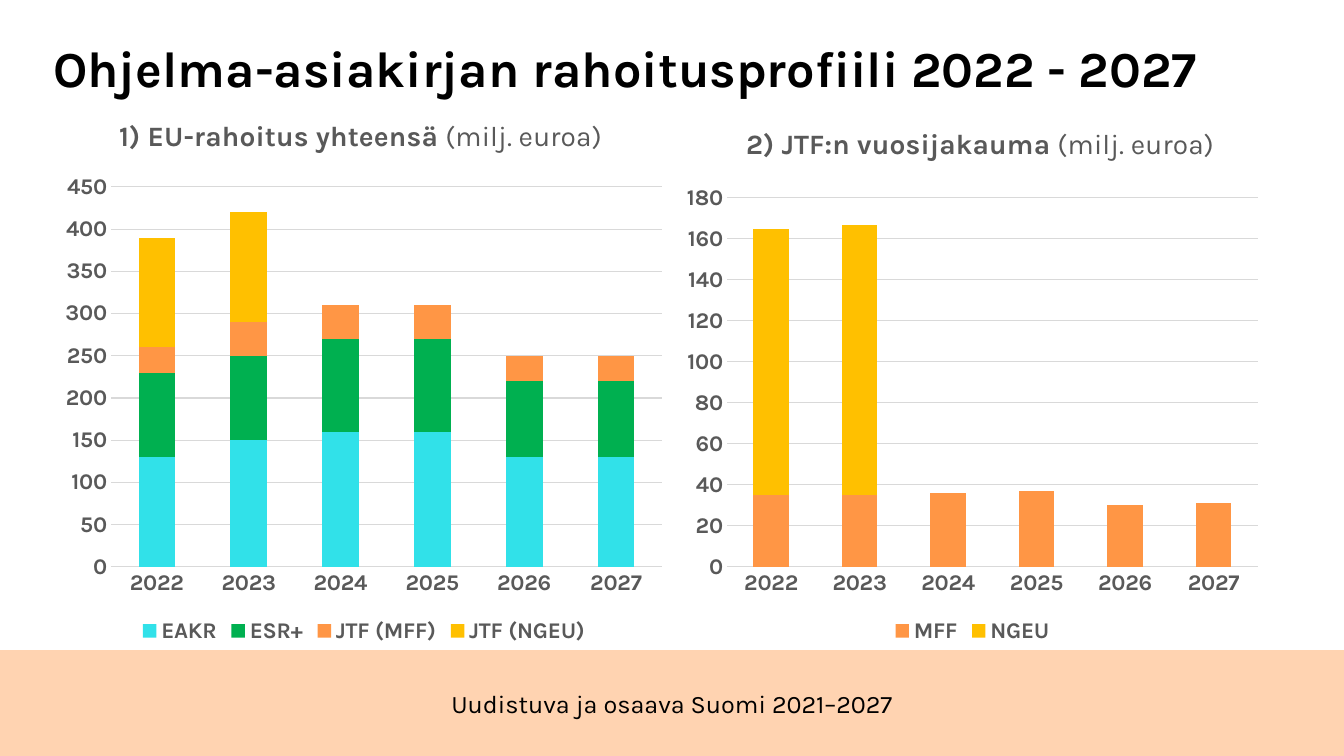
from lxml import etree
from pptx import Presentation
from pptx.chart.data import CategoryChartData
from pptx.dml.color import RGBColor
from pptx.enum.chart import XL_CHART_TYPE, XL_LEGEND_POSITION, XL_TICK_MARK
from pptx.enum.shapes import MSO_SHAPE
from pptx.enum.text import MSO_ANCHOR, PP_ALIGN
from pptx.oxml.ns import qn
from pptx.util import Pt

STACKED = XL_CHART_TYPE.COLUMN_STACKED
BOTTOM = XL_LEGEND_POSITION.BOTTOM
NO_TICK = XL_TICK_MARK.NONE
RECT = MSO_SHAPE.RECTANGLE
MIDDLE = MSO_ANCHOR.MIDDLE
LOW = MSO_ANCHOR.BOTTOM
LEFT = PP_ALIGN.LEFT
CENTER = PP_ALIGN.CENTER

WIDE, HIGH = 1344, 756
SCALE = 12192000 / WIDE
FACE = "Karla"
BLACK, GREY, RULE = "000000", "595959", "D9D9D9"
CYAN, GREEN, ORANGE, YELLOW = "31E1E9", "00B050", "FF9645", "FFC000"
YEARS = ["2022", "2023", "2024", "2025", "2026", "2027"]

TOTAL = dict(
    box=(53, 104, 622, 544), plot=(58, 83, 551, 380), head_at=(63, 11),
    head="1) EU-rahoitus yhteensä", top=450, step=50,
    rows=[
        ("EAKR", CYAN, [130, 150, 160, 160, 130, 130]),
        ("ESR+", GREEN, [100, 100, 110, 110, 90, 90]),
        ("JTF (MFF)", ORANGE, [30, 40, 40, 40, 30, 30]),
        ("JTF (NGEU)", YELLOW, [130, 130, None, None, None, None]),
    ])
SPLIT = dict(
    box=(675, 115, 595, 533), plot=(52, 83, 531, 369), head_at=(68, 8),
    head="2) JTF:n vuosijakauma", top=180, step=20,
    rows=[
        ("MFF", ORANGE, [35, 35, 36, 37, 30, 31]),
        ("NGEU", YELLOW, [130, 132, None, None, None, None]),
    ])


def px(*sizes):
    return [round(size * SCALE) for size in sizes]


def color(text):
    return RGBColor.from_string(text)


def style(font, size, tint, bold=False):
    font.name = FACE
    font.size = Pt(size)
    font.bold = bold
    font.color.rgb = color(tint)


def trim(frame, anchor):
    frame.margin_left = frame.margin_right = 0
    frame.margin_top = frame.margin_bottom = 0
    frame.word_wrap = True
    frame.vertical_anchor = anchor


def put_title(slide, box, text):
    title = slide.shapes.title
    title.left, title.top, title.width, title.height = px(*box)
    frame = title.text_frame
    trim(frame, LOW)
    frame.text = text
    line = frame.paragraphs[0]
    line.alignment = LEFT
    line.line_spacing = 0.9
    style(line.font, 36, BLACK, True)


def put_foot(slide, box, text):
    x, y, w, h = box
    band = slide.shapes.add_shape(RECT, *px(x, y, w, h))
    band.shadow.inherit = False
    band.fill.solid()
    band.fill.fore_color.rgb = color("FFD3B1")
    band.line.fill.background()
    note = slide.shapes.add_textbox(*px(x + 328, y + 38, w - 656, 30))
    trim(note.text_frame, MIDDLE)
    line = note.text_frame.paragraphs[0]
    line.text = text
    line.alignment = CENTER
    style(line.font, 18, BLACK)


def place(parent, box, area, inner=False):
    layout = parent.find(qn("c:layout"))
    if layout is None:
        layout = etree.Element(qn("c:layout"))
        parent.insert(0, layout)
    manual = etree.SubElement(layout, qn("c:manualLayout"))
    w, h = box[2:]
    parts = [("xMode", "edge"), ("yMode", "edge"),
             ("x", area[0] / w), ("y", area[1] / h)]
    if inner:
        parts.insert(0, ("layoutTarget", "inner"))
        parts += [("w", area[2] / w), ("h", area[3] / h)]
    for tag, value in parts:
        etree.SubElement(manual, qn("c:" + tag)).set("val", str(value))


def put_head(chart, box, spot, text):
    line = chart.chart_title.text_frame.paragraphs[0]
    for part, bold in ((text, True), (" (milj. euroa)", False)):
        run = line.add_run()
        run.text = part
        style(run.font, 20, GREY, bold)
    chart.chart_title.include_in_layout = False
    place(chart._chartSpace.chart.find(qn("c:title")), box, spot)


def set_axes(chart, top, step):
    years, money = chart.category_axis, chart.value_axis
    for axis in (years, money):
        axis.major_tick_mark = axis.minor_tick_mark = NO_TICK
        style(axis.tick_labels.font, 16, GREY, True)
    money.minimum_scale, money.maximum_scale = 0, top
    money.major_unit = step
    money.format.line.fill.background()
    money.has_major_gridlines = True
    for line in (years.format.line, money.major_gridlines.format.line):
        line.color.rgb = color(RULE)
        line.width = Pt(0.75)


def put_chart(slide, box, plot, head_at, head, top, step, rows):
    data = CategoryChartData(number_format="0")
    data.categories = YEARS
    for name, _, values in rows:
        data.add_series(name, values)
    chart = slide.shapes.add_chart(STACKED, *px(*box), data).chart
    style(chart.font, 10, BLACK)
    put_head(chart, box, head_at, head)
    set_axes(chart, top, step)
    chart.has_legend = True
    chart.legend.position = BOTTOM
    chart.legend.include_in_layout = False
    style(chart.legend.font, 16, GREY, True)
    bars = chart.plots[0]
    bars.gap_width, bars.overlap = 150, 100
    bars.vary_by_categories = False
    for series, (_, tint, _) in zip(bars.series, rows):
        series.format.fill.solid()
        series.format.fill.fore_color.rgb = color(tint)
    place(chart._chartSpace.chart.plotArea, box, plot, True)


def main():
    deck = Presentation()
    deck.slide_width, deck.slide_height = px(WIDE, HIGH)
    slide = deck.slides.add_slide(deck.slide_layouts[5])
    put_foot(slide, (0, 650, WIDE, 106), "Uudistuva ja osaava Suomi 2021–2027")
    put_title(slide, (53, 40, 1206, 58),
              "Ohjelma-asiakirjan rahoitusprofiili 2022 - 2027")
    for part in (TOTAL, SPLIT):
        put_chart(slide, **part)
    deck.save("out.pptx")


if __name__ == "__main__":
    main()
